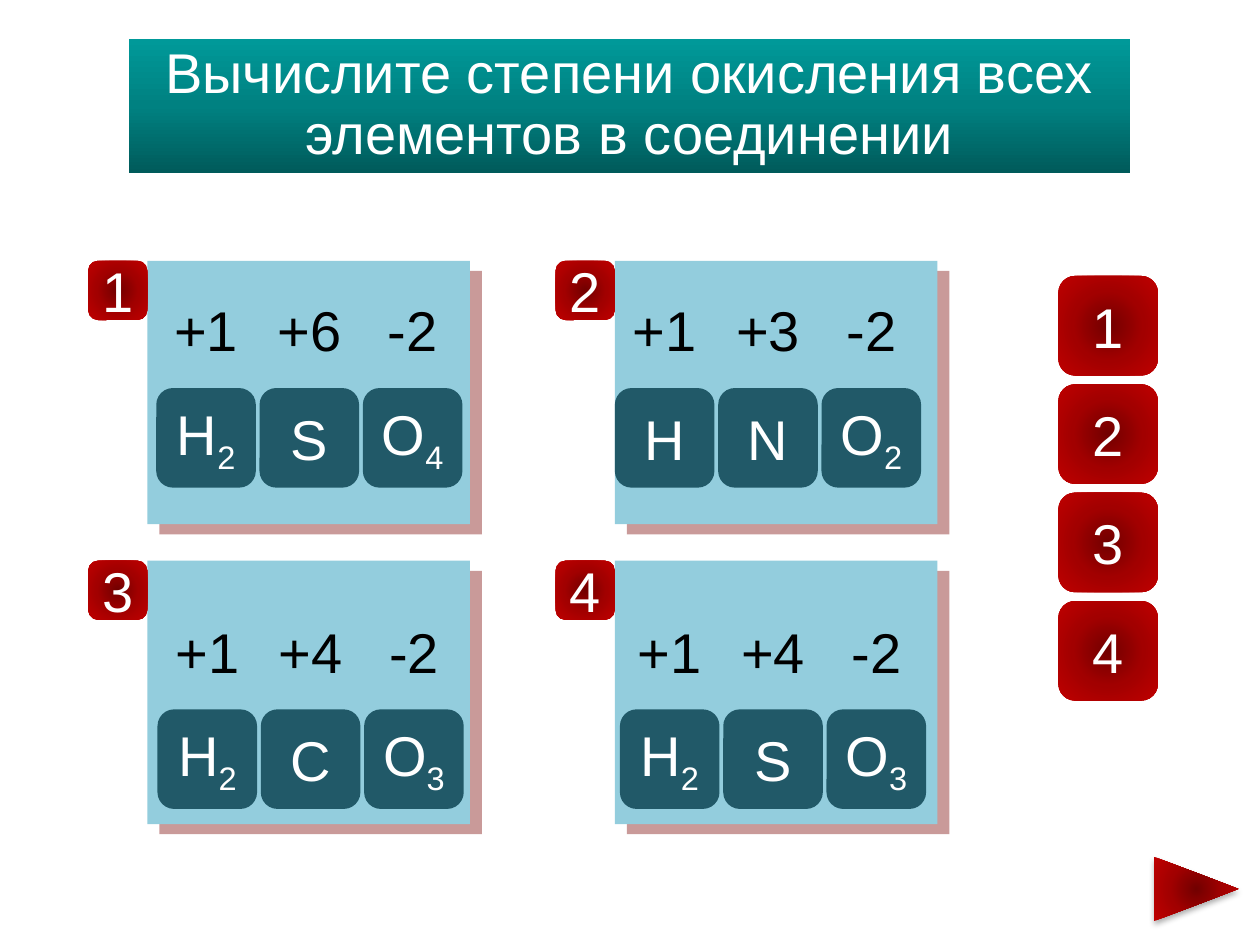
import pptx
import pptx.util
import pptx.dml.color
import pptx.enum.shapes
import pptx.enum.text
import pptx.oxml
import pptx.oxml.ns

Inches = pptx.util.Inches
SHAPE = pptx.enum.shapes.MSO_SHAPE
NS = pptx.oxml.ns.nsdecls("a")

TITLE = "Вычислите степени окисления всех элементов в соединении"
CARD_LEFTS = (1.17, 4.88)
CARD_TOPS = (2.07, 4.45)
TILE = 0.79
TILE_STEP = 0.82
BUTTON_STEP = 0.86
BADGE = 0.47
REDS = ("720000", "A20000", "C00000")
TEALS = ("005B5B", "008181", "009999")
RADIAL = ('<a:path %s path="circle"><a:fillToRect l="50000" t="50000" '
          'r="50000" b="50000"/></a:path>' % NS)
UPWARD = '<a:lin %s ang="16200000" scaled="0"/>' % NS

COMPOUNDS = [
    (1.24, 2.22, ("+1", "+6", "-2"), (("H", "2"), ("S", ""), ("O", "4"))),
    (4.88, 2.22, ("+1", "+3", "-2"), (("H", ""), ("N", ""), ("O", "2"))),
    (1.25, 4.77, ("+1", "+4", "-2"), (("H", "2"), ("C", ""), ("O", "3"))),
    (4.92, 4.77, ("+1", "+4", "-2"), (("H", "2"), ("S", ""), ("O", "3"))),
]


def rgb(value):
    return pptx.dml.color.RGBColor.from_string(value)


def fill_gradient(s, colors, direction):
    s.fill.gradient()
    grad = s._element.spPr.find(pptx.oxml.ns.qn("a:gradFill"))
    for child in list(grad):
        grad.remove(child)
    stops = "".join(
        '<a:gs pos="%d"><a:srgbClr val="%s"/></a:gs>' % (i * 50000, color)
        for i, color in enumerate(colors))
    grad.append(pptx.oxml.parse_xml("<a:gsLst %s>%s</a:gsLst>" % (NS, stops)))
    grad.append(pptx.oxml.parse_xml(direction))


def add_shadow(s, color, alpha, blur, dist, angle):
    effects = s._element.spPr.find(pptx.oxml.ns.qn("a:effectLst"))
    effects.append(pptx.oxml.parse_xml(
        '<a:outerShdw %s blurRad="%d" dist="%d" dir="%d" algn="tl" rotWithShape="0">'
        '<a:srgbClr val="%s"><a:alpha val="%d"/></a:srgbClr></a:outerShdw>'
        % (NS, pptx.util.Pt(blur), pptx.util.Pt(dist), angle * 60000,
           color, alpha * 1000)))


def add_run(p, text, color, subscript=False):
    r = p.add_run()
    r.text = text
    r.font.size = pptx.util.Pt(32)
    r.font.name = "Arial"
    r.font.color.rgb = rgb(color)
    if subscript:
        r.font._element.set("baseline", "-25000")


def centred_paragraph(s):
    tf = s.text_frame
    tf.word_wrap = True
    tf.vertical_anchor = pptx.enum.text.MSO_ANCHOR.MIDDLE
    p = tf.paragraphs[0]
    p.alignment = pptx.enum.text.PP_ALIGN.CENTER
    return p


def add_shape(slide, kind, left, top, width, height, fill=None):
    s = slide.shapes.add_shape(
        kind, Inches(left), Inches(top), Inches(width), Inches(height))
    s.shadow.inherit = False
    s.line.fill.background()
    if fill is None:
        s.fill.background()
    elif fill == REDS:
        fill_gradient(s, REDS, RADIAL)
    else:
        s.fill.solid()
        s.fill.fore_color.rgb = rgb(fill)
    return s


def add_tile(slide, left, top, size, text, fill=None, color="FFFFFF", index=""):
    s = add_shape(slide, SHAPE.ROUNDED_RECTANGLE, left, top, size, size, fill)
    tf = s.text_frame
    tf.margin_left = tf.margin_right = 0
    p = centred_paragraph(s)
    add_run(p, text, color)
    if index:
        add_run(p, index, color, subscript=True)


def add_title(slide):
    s = slide.shapes.title
    s.left, s.top = Inches(1.02), Inches(0.31)
    s.width, s.height = Inches(7.95), Inches(1.06)
    fill_gradient(s, TEALS, UPWARD)
    s.text_frame.auto_size = pptx.enum.text.MSO_AUTO_SIZE.NONE
    p = centred_paragraph(s)
    p.line_spacing = 0.9
    add_run(p, TITLE, "FFFFFF")


def add_card(slide, left, top):
    s = add_shape(slide, SHAPE.RECTANGLE, left, top, 2.56, 2.09, "93CDDD")
    add_shadow(s, "953735", 50, 0, 9, 40)


def add_compound(slide, left, top, states, elements):
    for i, state in enumerate(states):
        add_tile(slide, left + i * TILE_STEP, top, TILE, state, color="000000")
    for i, (symbol, index) in enumerate(elements):
        add_tile(slide, left + i * TILE_STEP, top + 0.86, TILE, symbol,
                 "215968", index=index)


def add_next_arrow(slide):
    s = add_shape(slide, SHAPE.ISOSCELES_TRIANGLE, 9.24, 6.72, 0.51, 0.67, REDS)
    s.rotation = 90
    add_shadow(s, "000000", 32, 3.5, 2.2, 90)


def main():
    prs = pptx.Presentation()
    prs.slide_width, prs.slide_height = Inches(10), Inches(7.5)
    slide = prs.slides.add_slide(prs.slide_layouts[5])
    add_title(slide)
    corners = [(left, top) for top in CARD_TOPS for left in CARD_LEFTS]
    for left, top in corners:
        add_card(slide, left, top)
    for compound in COMPOUNDS:
        add_compound(slide, *compound)
    for i, (left, top) in enumerate(corners):
        add_tile(slide, 8.4, 2.19 + i * BUTTON_STEP, TILE, str(i + 1), REDS)
        add_tile(slide, left - BADGE, top, BADGE, str(i + 1), REDS)
    add_next_arrow(slide)
    prs.save("out.pptx")


if __name__ == "__main__":
    main()
